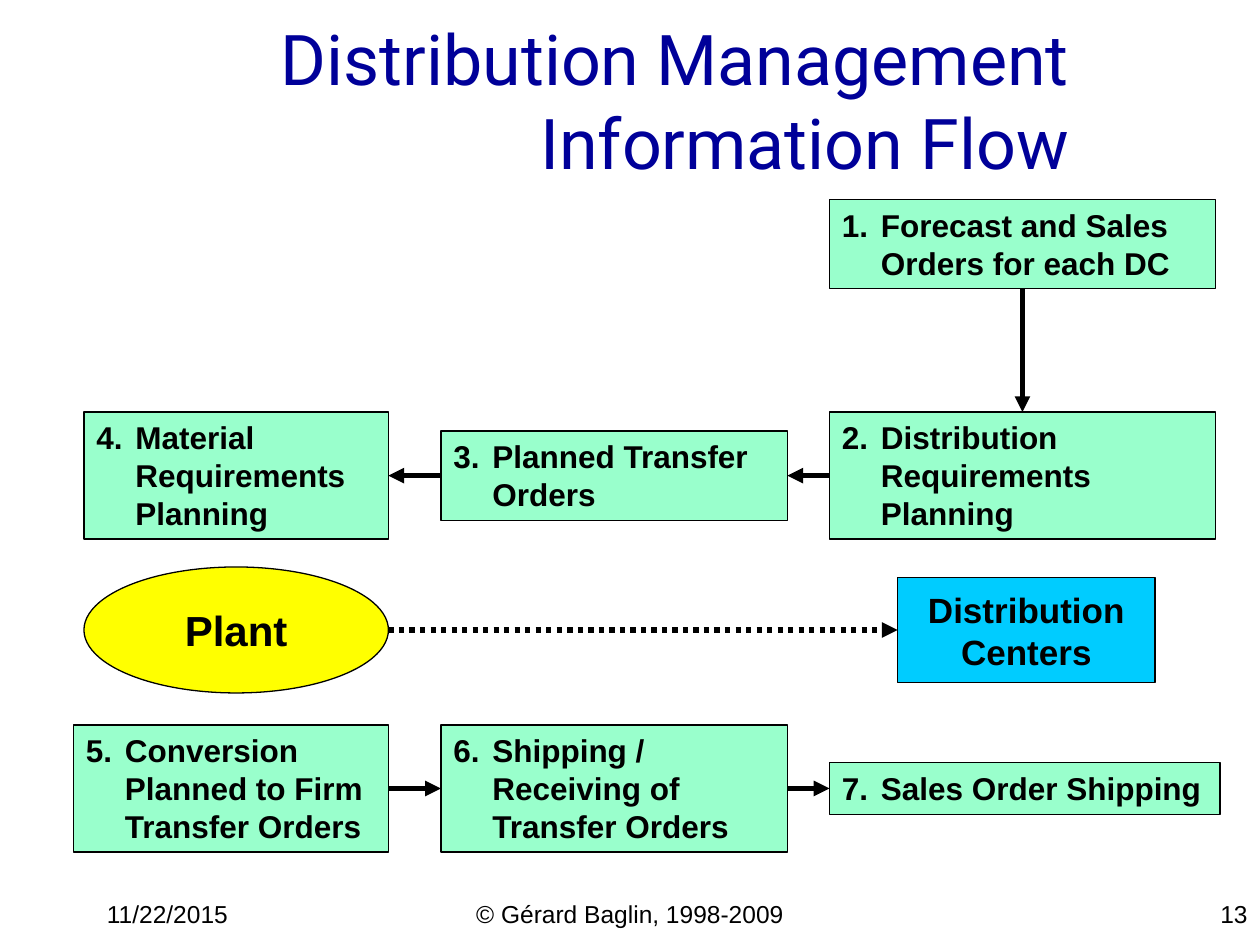
"""Build the distribution management information flow slide."""
from lxml.etree import SubElement
from pptx import Presentation
from pptx.dml.color import RGBColor
from pptx.enum.dml import MSO_LINE
from pptx.enum.shapes import MSO_CONNECTOR, MSO_SHAPE
from pptx.enum.text import MSO_ANCHOR, MSO_AUTO_SIZE, PP_ALIGN
from pptx.oxml.ns import qn
from pptx.util import Inches, Pt

BLACK = RGBColor(0x00, 0x00, 0x00)
NAVY = RGBColor(0x00, 0x00, 0x99)
MINT = RGBColor(0x99, 0xFF, 0xCC)
YELLOW = RGBColor(0xFF, 0xFF, 0x00)
CYAN = RGBColor(0x00, 0xCC, 0xFF)

prs = Presentation()
prs.slide_width, prs.slide_height = Inches(10), Inches(7.5)
U = prs.slide_width // 120
LEFT, MIDDLE, RIGHT = 8, 42, 79
TOP_ROW, PLAN_ROW, SITE_ROW, SHIP_ROW = 23.25, 45.3, 60, 75.1
TOP, WEST, BOTTOM, EAST = range(4)
s = prs.slides.add_slide(prs.slide_layouts[5])


def write(sp, text, size, align, bold=False, font="Arial", color=BLACK):
    sp.text_frame.word_wrap = True
    p = sp.text_frame.paragraphs[0]
    p.text, p.alignment = text, align
    p.font.name, p.font.size, p.font.bold = font, Pt(size), bold
    p.font.color.rgb = color
    return p


def add_block(kind, x, mid, w, h, fill):
    sp = s.shapes.add_shape(kind, int(x * U), int((mid - h / 2) * U), int(w * U), int(h * U))
    sp.shadow.inherit = False
    sp.fill.solid()
    sp.fill.fore_color.rgb = fill
    sp.line.color.rgb = BLACK
    sp.line.width = Pt(0.75)
    return sp


title = s.shapes.title
title.left, title.top, title.width, title.height = U, 2 * U, 102 * U, 15 * U
title.text_frame.vertical_anchor = MSO_ANCHOR.MIDDLE
title.text_frame.auto_size = MSO_AUTO_SIZE.NONE
write(title, "Distribution Management Information Flow", 40, PP_ALIGN.RIGHT, font="Roboto", color=NAVY)

for x, w, text, align in [
    (9, 25, "11/22/2015", PP_ALIGN.LEFT),
    (41, 38, "© Gérard Baglin, 1998-2009", PP_ALIGN.CENTER),
    (95, 25, "13", PP_ALIGN.RIGHT),
]:
    write(s.shapes.add_textbox(x * U, 85 * U, w * U, 3 * U), text, 14, align)

plant = add_block(MSO_SHAPE.OVAL, LEFT, SITE_ROW, 29, 12, YELLOW)
write(plant, "Plant", 24, PP_ALIGN.CENTER, bold=True)
centers = add_block(MSO_SHAPE.RECTANGLE, 85.5, SITE_ROW, 24.5, 10, CYAN)
write(centers, "Distribution Centers", 20, PP_ALIGN.CENTER, bold=True)

steps = []
for number, (x, mid, w, lines, text) in enumerate([
    (RIGHT, TOP_ROW, 36.75, 2, "Forecast and Sales Orders for each DC"),
    (RIGHT, PLAN_ROW, 36.75, 3, "Distribution Requirements Planning"),
    (MIDDLE, PLAN_ROW, 33, 2, "Planned Transfer Orders"),
    (LEFT, PLAN_ROW, 29, 3, "Material Requirements Planning"),
    (LEFT - 1, SHIP_ROW, 30, 3, "Conversion Planned to Firm Transfer Orders"),
    (MIDDLE, SHIP_ROW, 33, 3, "Shipping / Receiving of Transfer Orders"),
    (RIGHT, SHIP_ROW, 37.2, 1, "Sales Order Shipping"),
], start=1):
    sp = add_block(MSO_SHAPE.RECTANGLE, x, mid, w, 1.3 + 3.6 * lines, MINT)
    p = write(sp, f"{number}. \t{text}", 18, PP_ALIGN.LEFT, bold=True)
    pPr = p._p.get_or_add_pPr()
    pPr.set("marL", str(Inches(0.31)))
    pPr.set("indent", str(-Inches(0.31)))
    sp.text_frame.vertical_anchor = MSO_ANCHOR.TOP
    sp.text_frame.auto_size = MSO_AUTO_SIZE.SHAPE_TO_FIT_TEXT
    steps.append(sp)

STRAIGHT, ELBOW = MSO_CONNECTOR.STRAIGHT, MSO_CONNECTOR.ELBOW
for kind, start, start_site, end, end_site in [
    (STRAIGHT, plant, None, centers, WEST),
    (STRAIGHT, steps[0], BOTTOM, steps[1], TOP),
    (ELBOW, steps[1], WEST, steps[2], EAST),
    (ELBOW, steps[2], WEST, steps[3], EAST),
    (ELBOW, steps[4], EAST, steps[5], WEST),
    (ELBOW, steps[5], EAST, steps[6], WEST),
]:
    x, y = start.left + start.width, start.top + start.height // 2
    arrow = s.shapes.add_connector(kind, x, y, x, y)
    if start_site is not None:
        arrow.begin_connect(start, start_site)
    arrow.end_connect(end, end_site)
    arrow.line.color.rgb = BLACK
    arrow.line.width = Pt(3)
    if start is plant:
        arrow.line.dash_style = MSO_LINE.ROUND_DOT
    SubElement(arrow.line._get_or_add_ln(), qn("a:tailEnd"), type="triangle")
    SubElement(arrow._element.spPr, qn("a:effectLst"))

prs.save("out.pptx")
